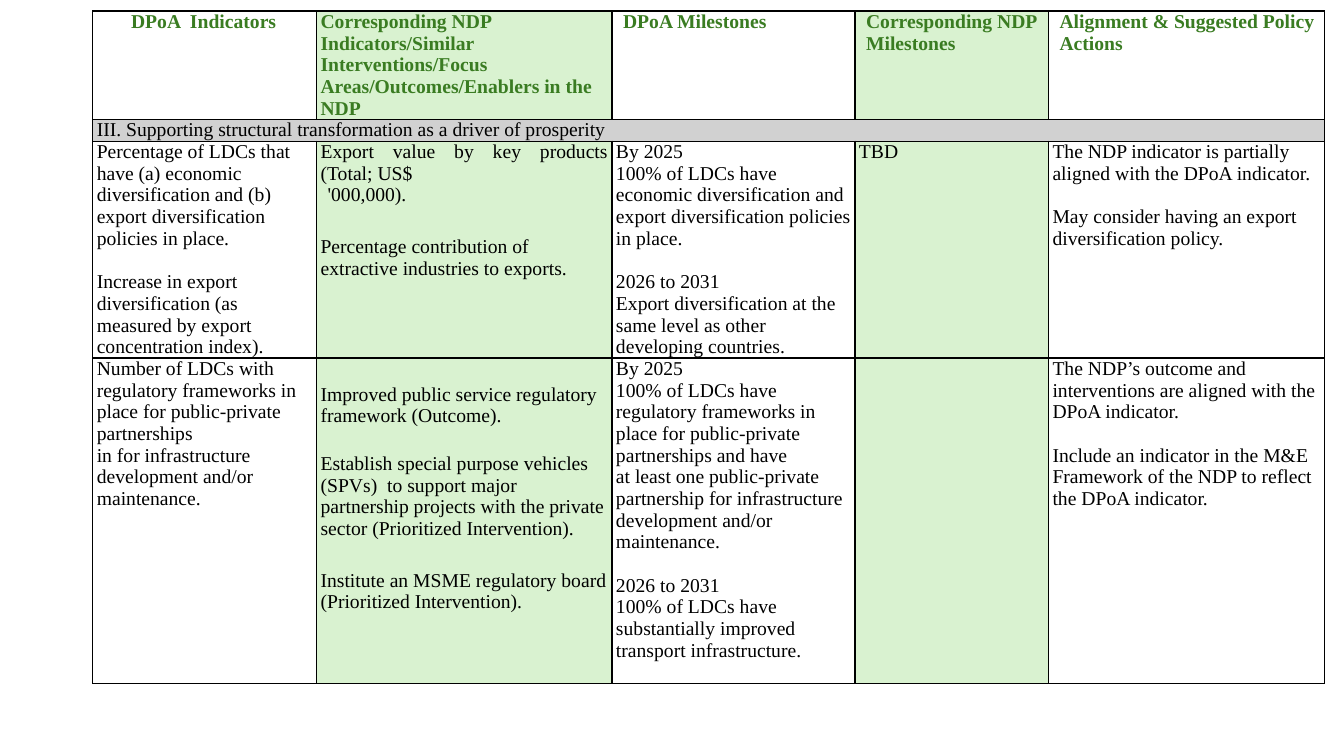
from lxml import etree
from pptx import Presentation
from pptx.dml.color import RGBColor
from pptx.enum.text import PP_ALIGN
from pptx.oxml.ns import qn
from pptx.util import Inches, Pt

JUSTIFY = PP_ALIGN.JUSTIFY
BLACK = RGBColor(0x00, 0x00, 0x00)
GREEN = RGBColor(0x3A, 0x7C, 0x22)
PALE_GREEN = RGBColor(0xD9, 0xF2, 0xD0)
GREY = RGBColor(0xD1, 0xD1, 0xD1)
FONT = "Times New Roman"
SIZE = 14
LINE = 15.5

COLS = [2.22, 2.93, 2.41, 1.92, 2.74]
ROWS = [1.07, 0.21, 2.15, 3.23]
NDP_COLS = (1, 3)
SECTION_ROW = 1

HEADERS = [
    ("DPoA  Indicators", 0.34),
    ("Corresponding NDP Indicators/Similar  Interventions/Focus "
     "Areas/Outcomes/Enablers in the NDP", 0),
    ("DPoA Milestones", 0.07),
    ("Corresponding NDP  Milestones", 0.07),
    ("Alignment & Suggested Policy Actions", 0.07),
]
SECTION = "III. Supporting structural transformation as a driver of prosperity"
GAP = {"before": LINE}
BODY = {
    2: [
        [("Percentage of LDCs that have (a) economic diversification and "
          "(b) export diversification policies in place.", {}),
         ("Increase in export diversification (as measured by export "
          "concentration index).", GAP)],
        [("Export value by key products (Total; US$", {"align": JUSTIFY}),
         ("'000,000).", {"align": JUSTIFY, "indent": 0.07}),
         ("Percentage contribution of extractive industries to exports.",
          {"before": LINE + 6})],
        [("By 2025", {}),
         ("100% of LDCs have economic diversification and export "
          "diversification policies in place.", {}),
         ("2026 to 2031", GAP),
         ("Export diversification at the same level as other developing "
          "countries.", {})],
        [("TBD", {})],
        [("The NDP indicator is partially aligned with the DPoA indicator.", {}),
         ("May consider having an export diversification policy.", GAP)],
    ],
    3: [
        [("Number of LDCs with regulatory frameworks in place for "
          "public-private partnerships", {}),
         ("in for infrastructure development and/or maintenance.", {})],
        [("Improved public service regulatory", {}),
         ("framework (Outcome).", {}),
         ("Establish special purpose vehicles (SPVs)  to support major "
          "partnership projects with the private sector (Prioritized "
          "Intervention).", {"before": LINE + 3}),
         ("Institute an MSME regulatory board (Prioritized Intervention).",
          {"before": LINE + 6})],
        [("By 2025", {}),
         ("100% of LDCs have regulatory frameworks in place for "
          "public-private partnerships and have", {}),
         ("at least one public-private partnership for infrastructure "
          "development and/or maintenance.", {}),
         ("2026 to 2031", GAP),
         ("100% of LDCs have substantially improved transport "
          "infrastructure.", {})],
        [],
        [("The NDP’s outcome and interventions are aligned with the DPoA "
          "indicator.", {}),
         ("Include an indicator in the M&E Framework of the NDP to reflect "
          "the DPoA indicator.", GAP)],
    ],
}


def add_text(tf, text, color=BLACK, bold=False, before=0, indent=0, align=None):
    p = tf.paragraphs[0] if not tf.text else tf.add_paragraph()
    p.alignment = align
    p.space_before = Pt(before)
    if indent:
        pPr = p._p.get_or_add_pPr()
        pPr.set("marL", str(Inches(indent)))
        pPr.set("indent", "0")
    r = p.add_run()
    r.text = text
    r.font.name = FONT
    r.font.size = Pt(SIZE)
    r.font.bold = bold
    r.font.color.rgb = color


def set_borders(cell):
    tcPr = cell._tc.get_or_add_tcPr()
    for i, side in enumerate(("a:lnL", "a:lnR", "a:lnT", "a:lnB")):
        ln = etree.Element(qn(side), w=str(Pt(1)))
        fill = etree.SubElement(ln, qn("a:solidFill"))
        etree.SubElement(fill, qn("a:srgbClr"), val=str(BLACK))
        tcPr.insert(i, ln)


def format_cell(cell, row, col):
    cell.margin_left = cell.margin_right = Inches(0.04)
    cell.margin_top = cell.margin_bottom = 0
    if row == SECTION_ROW:
        cell.fill.solid()
        cell.fill.fore_color.rgb = GREY
    elif col in NDP_COLS:
        cell.fill.solid()
        cell.fill.fore_color.rgb = PALE_GREEN
    else:
        cell.fill.background()
    set_borders(cell)


def add_alignment_table(slide, left, top, width, height):
    table = slide.shapes.add_table(
        len(ROWS), len(COLS), left, top, width, height).table
    table.first_row = table.horz_banding = False
    for column, share in zip(table.columns, COLS):
        column.width = int(width * share / sum(COLS))
    for row, share in zip(table.rows, ROWS):
        row.height = int(height * share / sum(ROWS))
    for i in range(len(ROWS)):
        for j in range(len(COLS)):
            format_cell(table.cell(i, j), i, j)

    for j, (text, indent) in enumerate(HEADERS):
        add_text(table.cell(0, j).text_frame, text,
                 color=GREEN, bold=True, indent=indent)
    section = table.cell(SECTION_ROW, 0)
    section.merge(table.cell(SECTION_ROW, len(COLS) - 1))
    add_text(section.text_frame, SECTION)
    for i, cells in BODY.items():
        for j, paragraphs in enumerate(cells):
            for text, style in paragraphs:
                add_text(table.cell(i, j).text_frame, text, **style)
    table.cell(3, 1).margin_top = Pt(LINE + 3)


def main():
    prs = Presentation()
    prs.slide_width = Inches(13.33)
    prs.slide_height = Inches(7.5)
    slide = prs.slides.add_slide(prs.slide_layouts[6])
    add_alignment_table(slide, Inches(0.92), Inches(0.11),
                        Inches(sum(COLS)), Inches(sum(ROWS)))
    prs.save("out.pptx")


if __name__ == "__main__":
    main()
